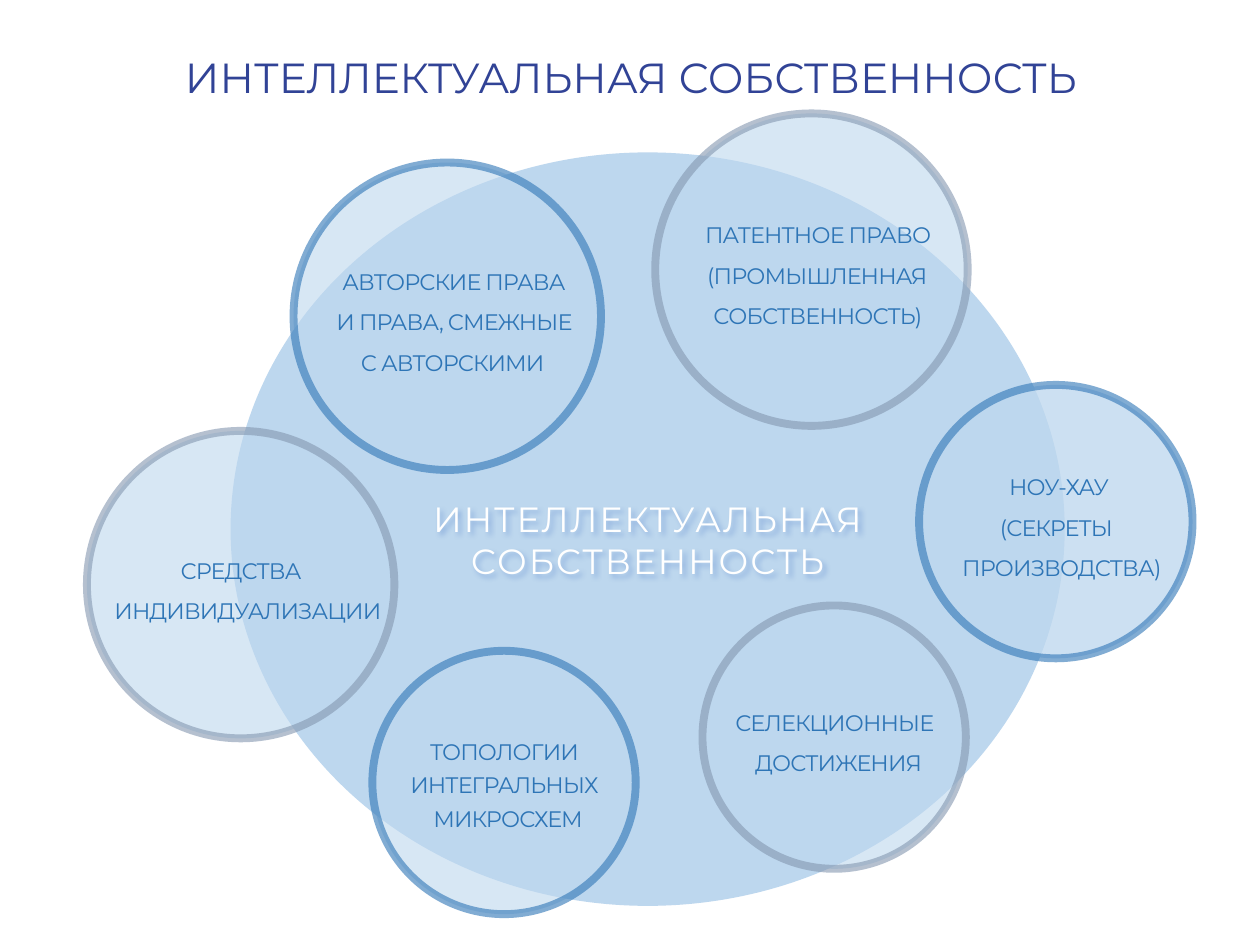
from dataclasses import dataclass

from lxml.etree import SubElement
from pptx import Presentation
from pptx.dml.color import RGBColor
from pptx.enum.shapes import MSO_SHAPE
from pptx.enum.text import MSO_ANCHOR, PP_ALIGN
from pptx.oxml.ns import qn
from pptx.util import Inches, Pt


@dataclass(frozen=True)
class Theme:
    """Colours, type sizes and spacing of the slide."""

    font: str = "Montserrat"
    heading: str = "314396"
    label: str = "2E75B6"
    core_text: str = "FFFFFF"
    shadow: str = "4472C4"
    bubble: str = "BDD7EE"
    blue_ring: str = "2E75B6"
    grey_ring: str = "8497B0"
    heading_size: int = 24
    core_size: int = 20
    label_size: int = 16
    ring_width: float = 4.5
    ring_opacity: int = 60


THEME = Theme()
COLUMNS, ROWS = 100, 75
SLIDE_WIDTH, SLIDE_HEIGHT = Inches(10), Inches(7.5)
LABEL_HEIGHT = 8.7


def frame(center_x, center_y, columns, rows):
    """Return left, top, width and height of a box centred on a grid point."""
    column, row = SLIDE_WIDTH / COLUMNS, SLIDE_HEIGHT / ROWS
    return (
        round((center_x - columns / 2) * column),
        round((center_y - rows / 2) * row),
        round(columns * column),
        round(rows * row),
    )


def set_opacity(fill, color, percent):
    """Fill with a solid colour of the given opacity."""
    fill.solid()
    fill.fore_color.rgb = RGBColor.from_string(color)
    if percent < 100:
        solid_color = fill._xPr.find(qn("a:solidFill"))[0]
        SubElement(solid_color, qn("a:alpha"), val=str(percent * 1000))


def add_oval(slide, place, opacity=100, ring=None):
    """Draw an ellipse, with a ring when a ring colour is given."""
    oval = slide.shapes.add_shape(MSO_SHAPE.OVAL, *place)
    oval.shadow.inherit = False
    set_opacity(oval.fill, THEME.bubble, opacity)
    if ring:
        oval.line.width = Pt(THEME.ring_width)
        set_opacity(oval.line.fill, ring, THEME.ring_opacity)
    else:
        oval.line.fill.background()


def add_text(slide, place, lines, size, color, spacings, align=PP_ALIGN.CENTER, **run_marks):
    """Write one paragraph per line, each with its own line spacing."""
    box = slide.shapes.add_textbox(*place)
    text = box.text_frame
    text.word_wrap = True
    text.vertical_anchor = MSO_ANCHOR.MIDDLE
    for index, (line, spacing) in enumerate(zip(lines, spacings)):
        paragraph = text.add_paragraph() if index else text.paragraphs[0]
        paragraph.text = line
        paragraph.alignment = align
        paragraph.line_spacing = spacing
        font = paragraph.font
        font.name, font.size = THEME.font, Pt(size)
        font.color.rgb = RGBColor.from_string(color)
        for mark, value in run_marks.items():
            font._element.set(mark, value)
    return box


def add_soft_shadow(box):
    """Cast a blurred shadow down and to the right."""
    effects = SubElement(box._element.spPr, qn("a:effectLst"))
    shadow = SubElement(effects, qn("a:outerShdw"), blurRad=str(Pt(3)),
                        dist=str(Pt(2)), dir="2700000", algn="tl", rotWithShape="0")
    tint = SubElement(shadow, qn("a:srgbClr"), val=THEME.shadow)
    SubElement(tint, qn("a:alpha"), val="40000")


def add_core(slide):
    """Draw the large oval and its shadowed caption."""
    center = (51.4, 42)
    add_oval(slide, frame(*center, 66.2, 59.8))
    caption = add_text(slide, frame(*center, 40.6, 15),
                       ["ИНТЕЛЛЕКТУАЛЬНАЯ", "СОБСТВЕННОСТЬ"],
                       THEME.core_size, THEME.core_text, (1.5, 1), spc="100")
    add_soft_shadow(caption)


def add_bubble(slide, center, diameter, ring, lines, label_width=21.1, opacity=60, spacing=1.2):
    """Draw a ringed circle with a small-caps label at its centre."""
    add_oval(slide, frame(*center, diameter, diameter), opacity, ring)
    add_text(slide, frame(*center, label_width, LABEL_HEIGHT), lines,
             THEME.label_size, THEME.label, [spacing] * len(lines),
             spc="-50", cap="small")


def main():
    """Build and save the slide."""
    deck = Presentation()
    deck.slide_width, deck.slide_height = SLIDE_WIDTH, SLIDE_HEIGHT
    slide = deck.slides.add_slide(deck.slide_layouts[6])
    blue, grey = THEME.blue_ring, THEME.grey_ring

    add_core(slide)
    add_bubble(slide, (66.2, 58.5), 20.9, grey, ["селекционные достижения"])
    add_bubble(slide, (40, 62.1), 20.9, blue,
               ["топологии интегральных микросхем"], spacing=1)
    add_bubble(slide, (83.8, 41.4), 21.7, blue,
               ["ноу-хау", "(секреты производства)"], opacity=76)
    add_bubble(slide, (64.4, 21.4), 24.8, grey,
               ["патентное право\v(промышленная", "собственность)"])
    add_bubble(slide, (19.1, 46.4), 24.4, grey,
               ["средства индивидуализации"], label_width=25.4)
    add_bubble(slide, (35.5, 25.1), 24.4, blue,
               ["авторские права", "и права, смежные", "с авторскими"], label_width=24.7)
    add_text(slide, frame(53.4, 6.35, 79.4, 11.5), ["ИНТЕЛЛЕКТУАЛЬНАЯ СОБСТВЕННОСТЬ"],
             THEME.heading_size, THEME.heading, [0.9], PP_ALIGN.LEFT)
    deck.save("out.pptx")


if __name__ == "__main__":
    main()
